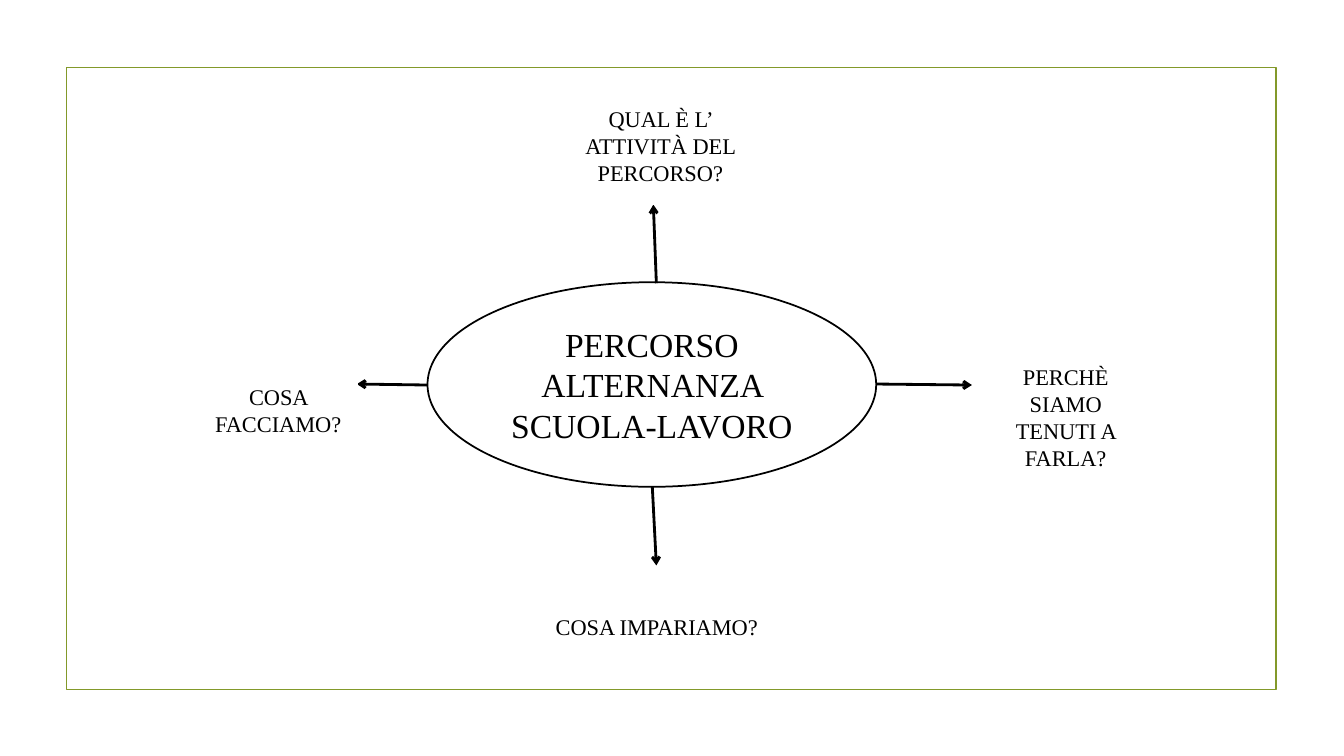
from lxml.etree import SubElement
from pptx import Presentation
from pptx.dml.color import RGBColor
from pptx.enum.shapes import MSO_CONNECTOR, MSO_SHAPE
from pptx.enum.text import MSO_ANCHOR, PP_ALIGN
from pptx.oxml.ns import qn
from pptx.util import Inches, Pt

BLACK, WHITE, GREEN = "000000", "FFFFFF", "83992A"
HUB = (4.24, 2.8, 4.45, 2.03)
TOPICS = [
    ("COSA FACCIAMO?", (-2.26, 0.72, 1.56, 1.09)),
    ("QUAL Ѐ L’ ATTIVITÀ DEL PERCORSO?", (1.41, -1.94, 1.8, 1.17)),
    ("PERCHЀ SIAMO TENUTI A FARLA?", (5.47, 0.56, 1.72, 1.56)),
    ("COSA IMPARIAMO?", (0.87, 2.83, 2.81, 1.17)),
]
ARROWS = [
    ((2.27, 0.01), (2.24, -0.77)),
    ((2.23, 2.03), (2.27, 2.81)),
    ((4.46, 1.01), (5.4, 1.02)),
    ((0, 1.02), (-0.7, 1.01)),
]


def color(code):
    return RGBColor.from_string(code)


def add_box(slide, kind, box, line, fill=None):
    shape = slide.shapes.add_shape(kind, *map(Inches, box))
    shape.shadow.inherit = False
    if fill:
        shape.fill.solid()
        shape.fill.fore_color.rgb = color(fill)
    else:
        shape.fill.background()
    shape.line.color.rgb = color(line)
    shape.line.width = Pt(1.25)
    return shape


def write(shape, text, size=16, ink=BLACK, face="Times New Roman"):
    frame = shape.text_frame
    frame.word_wrap = True
    frame.vertical_anchor = MSO_ANCHOR.MIDDLE
    para = frame.paragraphs[0]
    para.alignment = PP_ALIGN.CENTER
    run = para.add_run()
    run.text = text
    run.font.size = Pt(size)
    run.font.name = face
    run.font.color.rgb = color(ink)


def add_arrow(slide, start, end):
    arrow = slide.shapes.add_connector(
        MSO_CONNECTOR.STRAIGHT, *map(Inches, start + end))
    arrow.line.color.rgb = color(BLACK)
    arrow.line.width = Pt(2)
    SubElement(arrow.line._get_or_add_ln(), qn("a:tailEnd"), type="arrow")
    SubElement(arrow._element.spPr, qn("a:effectLst"))


def draw_map(slide, box):
    left, top = box[:2]
    hub = add_box(slide, MSO_SHAPE.OVAL, box, BLACK, WHITE)
    write(hub, "PERCORSO ALTERNANZA SCUOLA-LAVORO", size=24)
    for start, end in ARROWS:
        add_arrow(slide, (left + start[0], top + start[1]),
                  (left + end[0], top + end[1]))
    for text, (x, y, wide, high) in TOPICS:
        place = (left + x, top + y, wide, high)
        topic = add_box(slide, MSO_SHAPE.RECTANGLE, place, WHITE, WHITE)
        write(topic, text)


def main():
    deck = Presentation()
    deck.slide_width = Inches(13.33)
    deck.slide_height = Inches(7.5)
    slide = deck.slides.add_slide(deck.slide_layouts[6])
    add_box(slide, MSO_SHAPE.RECTANGLE, (0.66, 0.67, 12, 6.17), GREEN)
    draw_map(slide, HUB)
    deck.save("out.pptx")


if __name__ == "__main__":
    main()
